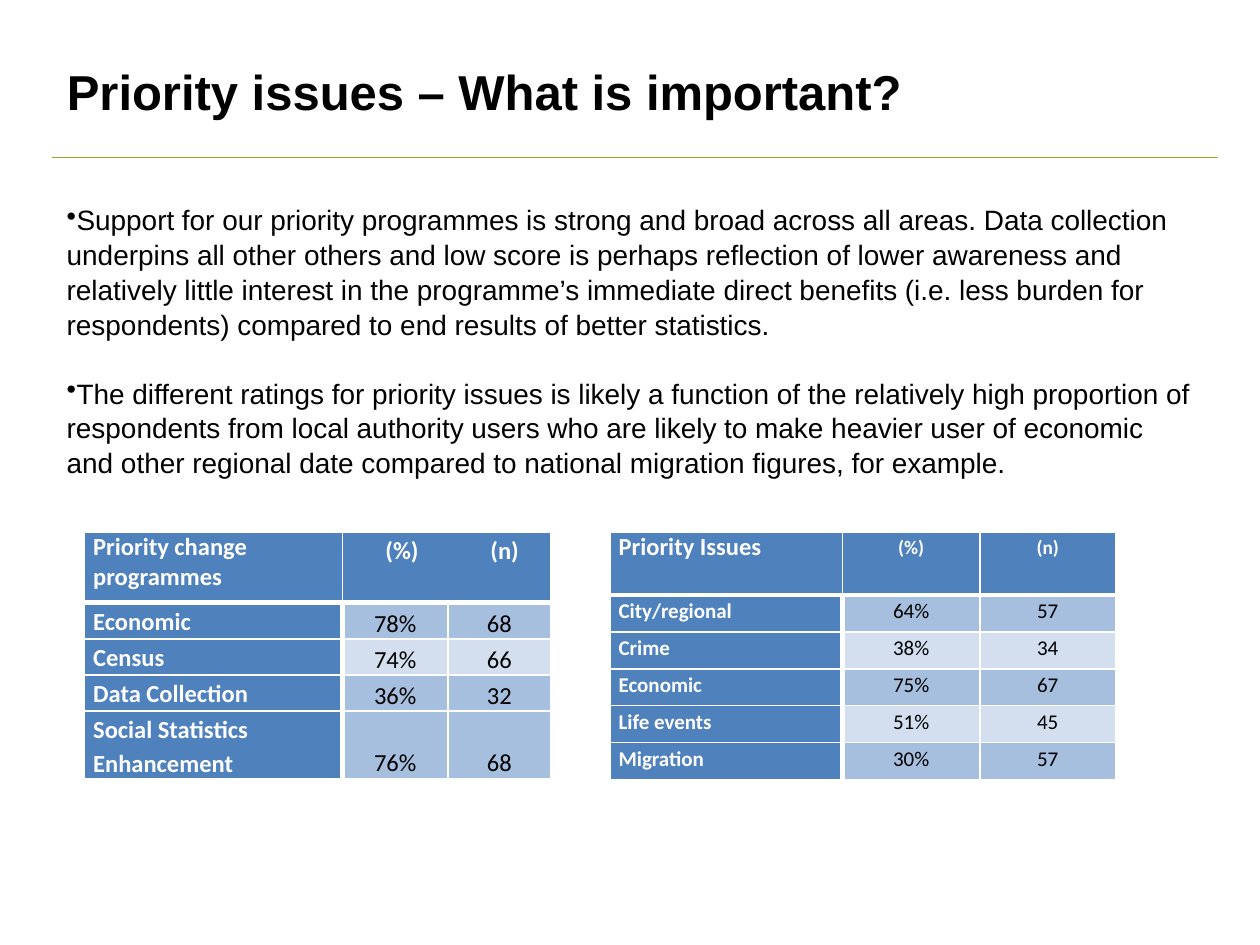
from dataclasses import dataclass
from typing import Any

from lxml.etree import SubElement
from pptx import Presentation
from pptx.dml.color import RGBColor
from pptx.enum.shapes import MSO_CONNECTOR
from pptx.enum.text import MSO_ANCHOR, MSO_AUTO_SIZE, PP_ALIGN
from pptx.oxml.ns import qn
from pptx.util import Pt

BLACK = RGBColor(0x00, 0x00, 0x00)
WHITE = RGBColor(0xFF, 0xFF, 0xFF)
OLIVE = RGBColor(0x9B, 0xA9, 0x21)
BLUE = RGBColor(0x4F, 0x81, 0xBD)
BAND_DARK = RGBColor(0xA7, 0xBF, 0xDE)
BAND_LIGHT = RGBColor(0xD3, 0xDF, 0xEE)

BULLETS = [
    "Support for our priority programmes is strong and broad across all areas. "
    "Data collection underpins all other others and low score is perhaps reflection "
    "of lower awareness and relatively little interest in the programme’s immediate "
    "direct benefits (i.e. less burden for respondents) compared to end results of "
    "better statistics.",
    "The different ratings for priority issues is likely a function of the relatively "
    "high proportion of respondents from local authority users who are likely to make "
    "heavier user of economic and other regional date compared to national migration "
    "figures, for example.",
]

SIDE_INSETS = dict(margin_left=Pt(5), margin_right=Pt(5), margin_top=0, margin_bottom=0)
TIGHT_INSETS = dict(margin_left=Pt(0.7), margin_right=Pt(0.7), margin_top=Pt(0.7), margin_bottom=0)
LABEL_PARA = dict(line_spacing=1.15)
CENTRED_PARA = dict(alignment=PP_ALIGN.CENTER, line_spacing=1.15)


@dataclass(frozen=True)
class RatingTable:
    left: float
    widths: list[float]
    heights: list[float]
    rows: list[list[str]]
    head_size: float
    body_size: float
    value_cell: dict[str, Any]
    value_para: dict[str, Any]
    header_tabs: tuple[float, ...] = ()


TABLES = [
    RatingTable(
        348.5, [133, 78.5, 77.5], [36] + [21.1] * 5,
        [["Priority Issues", "(%)", "(n)"],
         ["City/regional", "64%", "57"],
         ["Crime", "38%", "34"],
         ["Economic", "75%", "67"],
         ["Life events", "51%", "45"],
         ["Migration", "30%", "57"]],
        11, 12, SIDE_INSETS, CENTRED_PARA,
    ),
    RatingTable(
        48.25, [147.5, 60.25, 58.75], [40.5] + [20.6] * 3 + [38.4],
        [["Priority change programmes", "\t(%)\t(n)", ""],
         ["Economic", "78%", "68"],
         ["Census", "74%", "66"],
         ["Data Collection", "36%", "32"],
         ["Social Statistics Enhancement", "76%", "68"]],
        14, 14, dict(TIGHT_INSETS, vertical_anchor=MSO_ANCHOR.BOTTOM),
        dict(alignment=PP_ALIGN.CENTER), (19.5, 79.5),
    ),
]


def apply(obj: Any, values: dict[str, Any]) -> None:
    for name, value in values.items():
        setattr(obj, name, value)


def write(p: Any, text: str, font: str, size: float, color: RGBColor, bold: bool = False) -> None:
    r = p.add_run()
    r.text = text
    apply(r.font, dict(name=font, size=Pt(size), bold=bold))
    r.font.color.rgb = color


def add_borders(cell: Any, row: int, col: int) -> None:
    thick = {
        "L": row > 0 and col == 1,
        "R": row > 0 and col == 0,
        "T": row == 1,
        "B": row == 0,
    }
    tc_pr = cell._tc.get_or_add_tcPr()
    for side, heavy in thick.items():
        ln = SubElement(tc_pr, qn(f"a:ln{side}"), w=str(Pt(3 if heavy else 1)))
        SubElement(SubElement(ln, qn("a:solidFill")), qn("a:srgbClr"), val=str(WHITE))


def add_tabs(p: Any, positions: tuple[float, ...]) -> None:
    tabs = SubElement(p._p.get_or_add_pPr(), qn("a:tabLst"))
    for pos in positions:
        SubElement(tabs, qn("a:tab"), pos=str(Pt(pos)), algn="l")


def fill_cell(cell: Any, spec_table: RatingTable, row: int, col: int) -> None:
    text = spec_table.rows[row][col]
    is_head, is_label = row == 0, col == 0
    is_value = not (is_head or is_label)
    add_borders(cell, row, col)
    cell.fill.solid()
    cell.fill.fore_color.rgb = (BAND_DARK if row % 2 or row == len(spec_table.rows) - 1
                                else BAND_LIGHT) if is_value else BLUE
    apply(cell, spec_table.value_cell if is_value else SIDE_INSETS)
    if not text:
        return
    p = cell.text_frame.paragraphs[0]
    if is_value:
        apply(p, spec_table.value_para)
    elif is_label:
        apply(p, {} if is_head else LABEL_PARA)
    elif "\t" in text:
        apply(p, LABEL_PARA)
        add_tabs(p, spec_table.header_tabs)
    else:
        apply(p, CENTRED_PARA)
    size = 14 if is_head and is_label else spec_table.head_size if is_head else spec_table.body_size
    write(p, text, "Calibri", size, BLACK if is_value else WHITE, not is_value)


def draw_table(s: Any, t: RatingTable) -> None:
    frame = s.shapes.add_table(len(t.rows), len(t.widths), Pt(t.left), Pt(304),
                               Pt(sum(t.widths)), Pt(sum(t.heights)))
    table = frame.table
    for column, width in zip(table.columns, t.widths):
        column.width = Pt(width)
    for i, height in enumerate(t.heights):
        table.rows[i].height = Pt(height)
        for j in range(len(t.widths)):
            fill_cell(table.cell(i, j), t, i, j)
    if t.header_tabs:
        table.cell(0, 1).merge(table.cell(0, 2))


def draw_title(s: Any) -> None:
    sp = s.shapes.title
    apply(sp, dict(left=Pt(31), top=Pt(31.7), width=Pt(635), height=Pt(41)))
    tf = sp.text_frame
    apply(tf, dict(word_wrap=True, vertical_anchor=MSO_ANCHOR.MIDDLE,
                   auto_size=MSO_AUTO_SIZE.SHAPE_TO_FIT_TEXT))
    p = tf.paragraphs[0]
    p.alignment = PP_ALIGN.LEFT
    write(p, "Priority issues – What is important?", "Arial", 28, BLACK, True)


def draw_rule(s: Any) -> None:
    line = s.shapes.add_connector(MSO_CONNECTOR.STRAIGHT, Pt(30), Pt(90), Pt(696), Pt(90))
    line.line.width = Pt(0.75)
    line.line.color.rgb = OLIVE
    SubElement(line._element.spPr, qn("a:effectLst"))


def draw_bullets(s: Any) -> None:
    tf = s.shapes.add_textbox(Pt(31), Pt(111.6), Pt(657.5), Pt(162.7)).text_frame
    apply(tf, dict(word_wrap=True, auto_size=MSO_AUTO_SIZE.SHAPE_TO_FIT_TEXT))
    for i, text in enumerate(BULLETS):
        p = tf.add_paragraph() if i else tf.paragraphs[0]
        SubElement(p._p.get_or_add_pPr(), qn("a:buChar"), char="•")
        apply(p, dict(line_spacing=1.04, space_before=Pt(19.2 if i else 0)))
        write(p, text, "Arial", 16, BLACK)


def main() -> None:
    prs = Presentation()
    apply(prs, dict(slide_width=Pt(720), slide_height=Pt(540)))
    s = prs.slides.add_slide(prs.slide_layouts[5])
    draw_rule(s)
    draw_title(s)
    draw_bullets(s)
    for t in TABLES:
        draw_table(s, t)
    prs.save("out.pptx")


if __name__ == "__main__":
    main()
